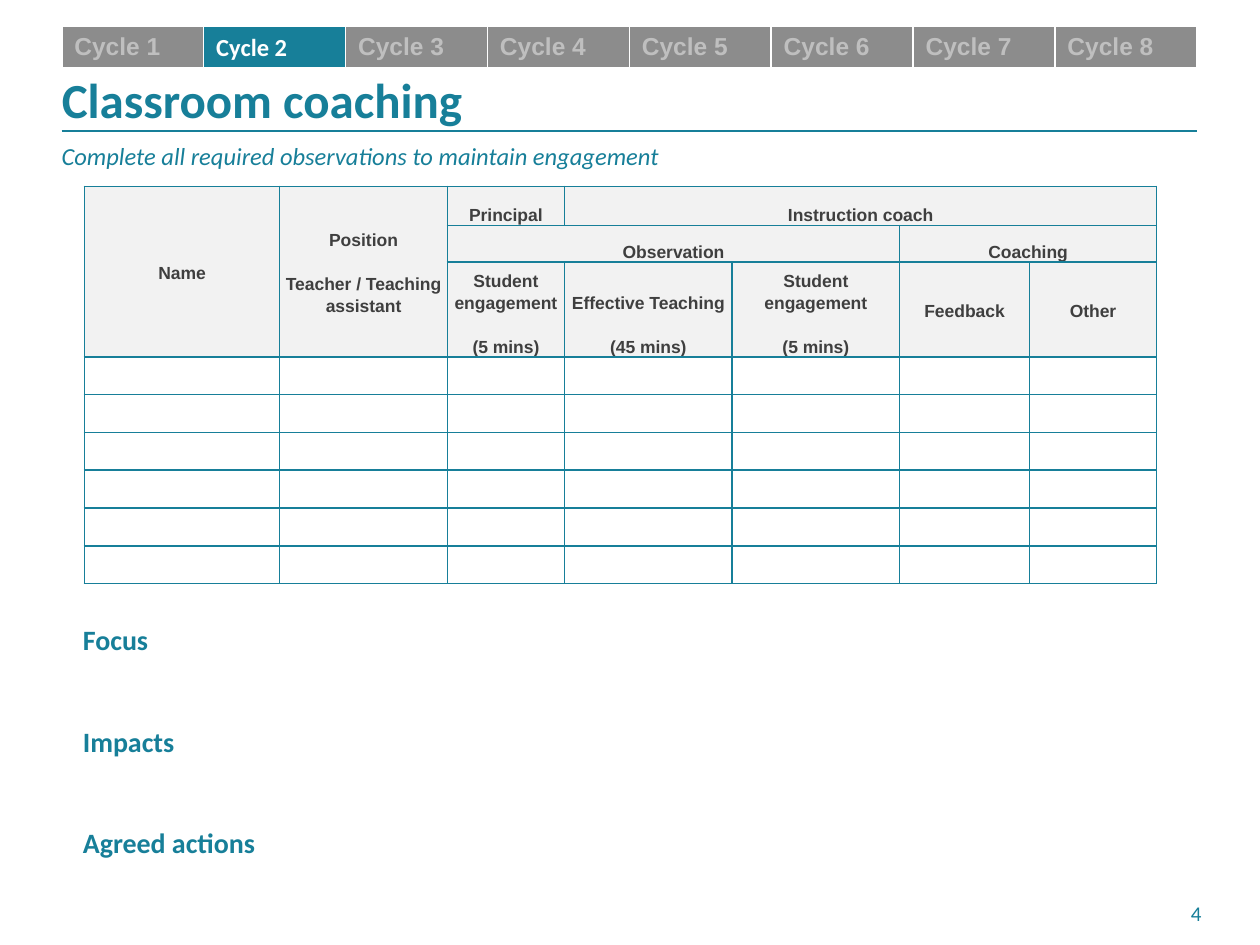
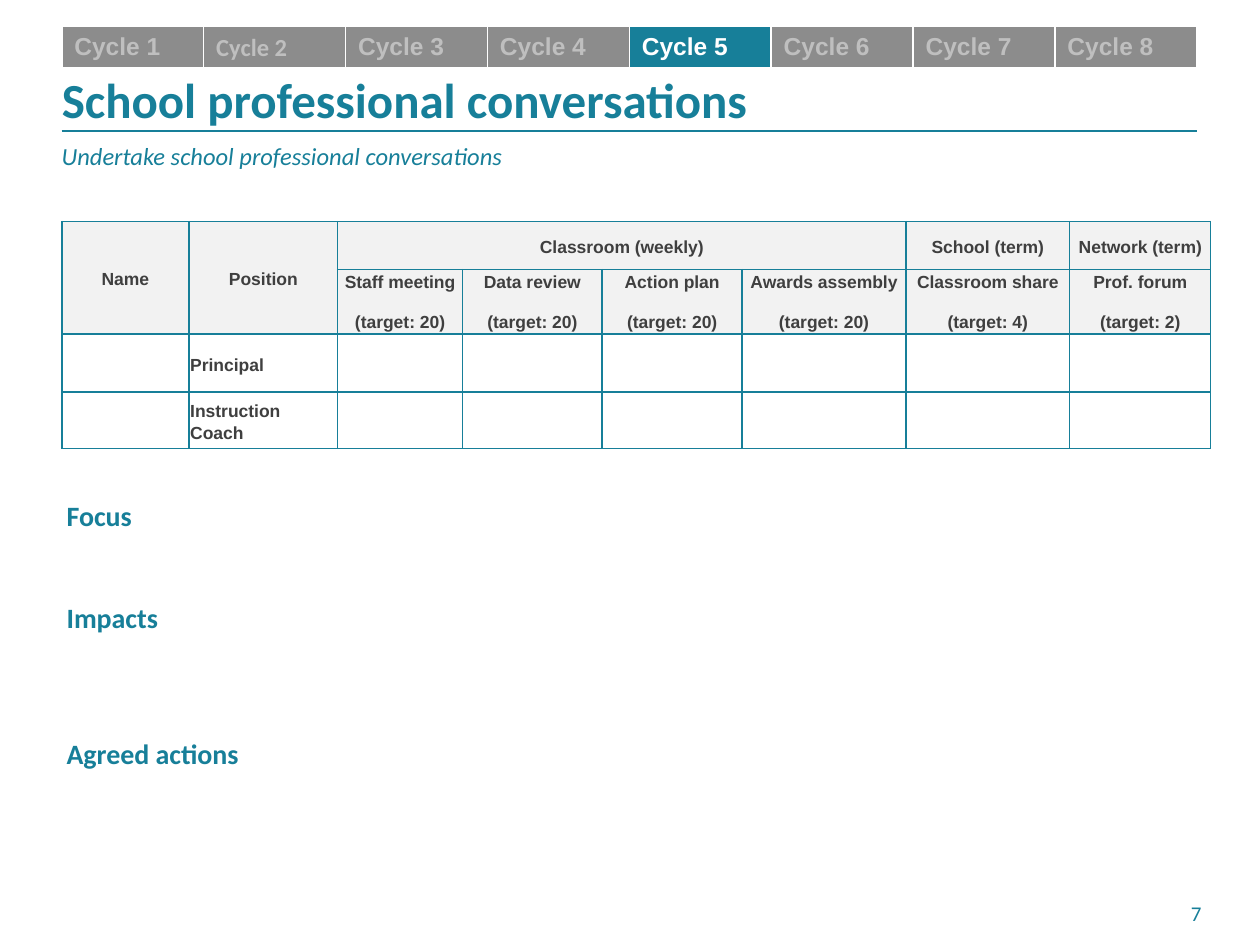
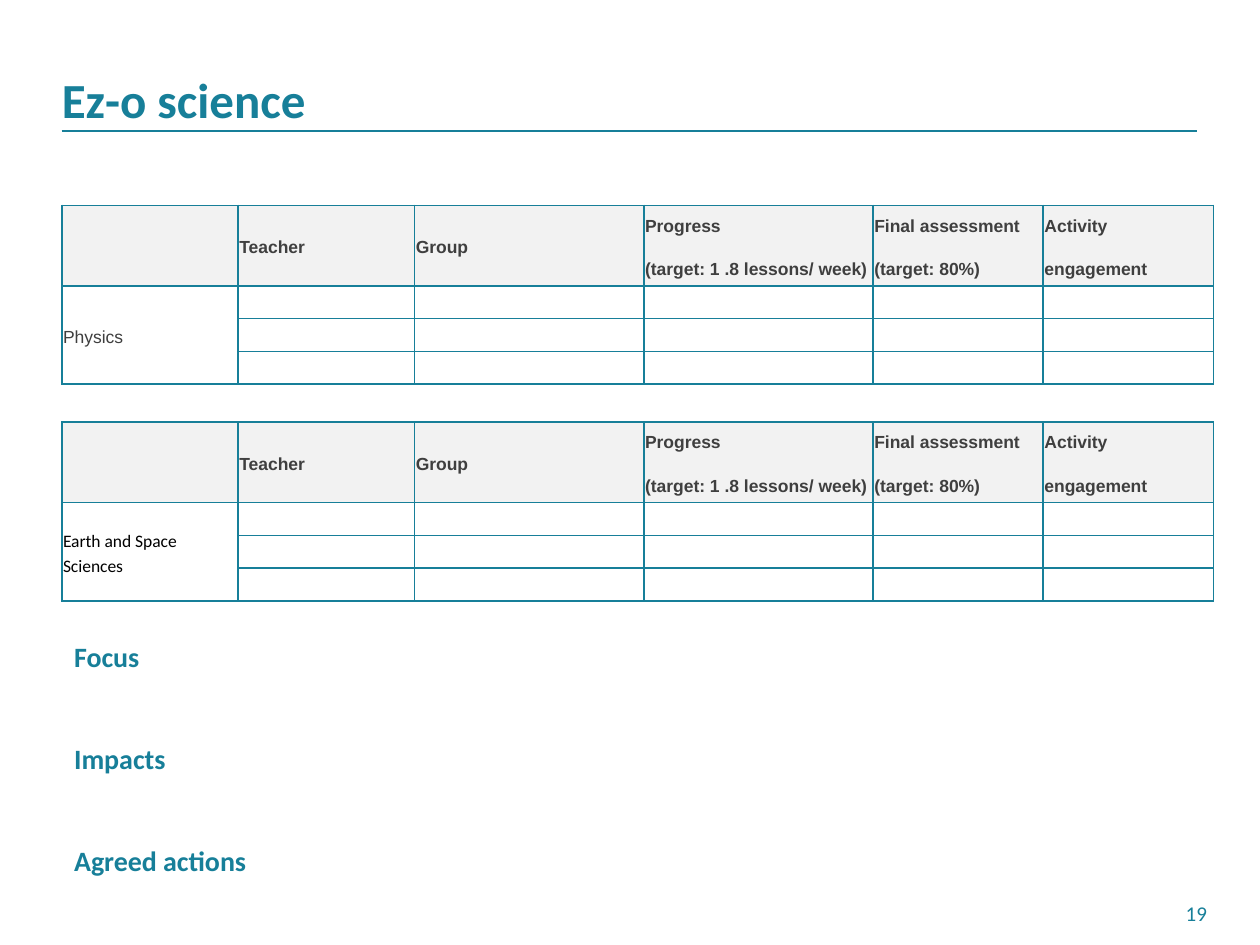
from lxml.etree import SubElement as Sub
from pptx import Presentation
from pptx.dml.color import RGBColor
from pptx.enum.shapes import MSO_CONNECTOR as Conn
from pptx.enum.text import MSO_ANCHOR as Anchor, MSO_AUTO_SIZE as Fit, PP_ALIGN as Align
from pptx.oxml.ns import qn
from pptx.util import Inches, Pt

TEAL, WHITE, BLACK = "177F99", "FFFFFF", "000000"
BAND, DIM, HEAD, INK = "8C8C8C", "BFBFBF", "F2F2F2", "3F3F3F"
LEFT, WIDE = 0.49, 9.01
MID, JUST = Align.CENTER, Align.JUSTIFY


def tint(code):
    return RGBColor.from_string(code)


def put(par, text, size, color, font="Calibri", bold=False, italic=False):
    run = par.add_run()
    run.text = text
    face = run.font
    face.name, face.size = font, Pt(size)
    face.bold, face.italic = bold, italic
    face.color.rgb = tint(color)


def clear(frame):
    """Remove the insets of a text frame."""
    frame.margin_left = frame.margin_right = 0
    frame.margin_top = frame.margin_bottom = 0


def box(slide, left, top, width, height):
    frame = slide.shapes.add_textbox(
        Inches(left), Inches(top), Inches(width), Inches(height)).text_frame
    frame.word_wrap = True
    return frame


# Parts that every slide shares
def start(deck, title, page, note=None):
    slide = deck.slides.add_slide(deck.slide_layouts[5])
    rule = slide.shapes.add_connector(
        Conn.STRAIGHT, Inches(LEFT), Inches(1.04), Inches(LEFT + WIDE), Inches(1.04))
    rule.line.color.rgb = tint(TEAL)
    rule.line.width = Pt(1)
    Sub(rule._element.spPr, qn("a:effectLst"))

    head = slide.shapes.title
    head.left, head.top = Inches(LEFT), Inches(0.55)
    head.width, head.height = Inches(WIDE), Inches(0.47)
    frame = head.text_frame
    clear(frame)
    frame.auto_size = Fit.NONE
    frame.vertical_anchor = Anchor.TOP
    frame.paragraphs[0].alignment = Align.LEFT
    put(frame.paragraphs[0], title, 28, TEAL, bold=True)

    foot = box(slide, 9.18, 7.15, 0.63, 0.35)
    clear(foot)
    foot.paragraphs[0].alignment = MID
    put(foot.paragraphs[0], page, 12, TEAL)
    if note:
        put(box(slide, 0.39, 1.07, 9.22, 0.34).paragraphs[0], note, 14, TEAL, italic=True)
    return slide


def edge(cell, color, base=1):
    """Draw the four borders of a cell; base is the width of the bottom one."""
    props = cell._tc.get_or_add_tcPr()
    for side, width in (("L", 1), ("R", 1), ("T", 1), ("B", base)):
        line = Sub(props, qn("a:ln" + side), w=str(Pt(width)))
        Sub(Sub(line, qn("a:solidFill")), qn("a:srgbClr"), val=color)


def paint(cell, color):
    cell.fill.solid()
    cell.fill.fore_color.rgb = tint(color)


def grid(slide, left, top, cols, rows):
    shape = slide.shapes.add_table(len(rows), len(cols), Inches(left), Inches(top),
                                   Inches(sum(cols)), Inches(sum(rows)))
    table = shape.table
    table.first_row = table.horz_banding = False
    for col, width in zip(table.columns, cols):
        col.width = Inches(width)
    for row, height in zip(table.rows, rows):
        row.height = Inches(height)
    return table


# Cycle tabs
def tabs(slide, now):
    table = grid(slide, LEFT, 0.21, [WIDE / 8] * 8, [0.34])
    for num, cell in enumerate(table.iter_cells(), 1):
        live = num == now
        edge(cell, WHITE, 3)
        paint(cell, TEAL if live else BAND)
        put(cell.text_frame.paragraphs[0], f"Cycle {num}", 14, WHITE if live else DIM,
            "Calibri" if num == 2 else "Arial", bold=True)


# Form tables
def form(slide, left, top, cols, rows, heads):
    """Blank bordered table whose first rows are shaded."""
    table = grid(slide, left, top, cols, rows)
    for place, cell in enumerate(table.iter_cells()):
        edge(cell, TEAL)
        paint(cell, HEAD if place < heads * len(cols) else WHITE)
        cell.margin_left = cell.margin_right = cell.margin_top = Inches(0.01)
        cell.margin_bottom = 0
        cell.vertical_anchor = Anchor.MIDDLE
        Sub(cell.text_frame.paragraphs[0]._p, qn("a:endParaRPr"), sz="1000")
    return table


def fill(table, row, col, text, down=1, over=1, align=MID, lead=1.15,
         low=False, font="Arial", color=INK, bold=True):
    cell = table.cell(row, col)
    if down > 1 or over > 1:
        cell.merge(table.cell(row + down - 1, col + over - 1))
    if low:
        cell.vertical_anchor = Anchor.BOTTOM
    frame = cell.text_frame
    for num, line in enumerate(text.split("\n")):
        par = frame.add_paragraph() if num else frame.paragraphs[0]
        par.alignment, par.line_spacing = align, lead
        par.space_before = par.space_after = Pt(6)
        put(par, line, 10, color, font, bold)


# Headings for written notes, with room left between them
def notes(slide, left, top, width, height, gaps=(39, 39)):
    frame = box(slide, left, top, width, height)
    for num, word in enumerate(("Focus", "Impacts", "Agreed actions")):
        par = frame.add_paragraph() if num else frame.paragraphs[0]
        if num:
            par.space_before = Pt(gaps[num - 1])
        put(par, word, 16, TEAL, bold=True)


def coach(deck):
    slide = start(deck, "Classroom coaching", "4",
                  "Complete all required observations to maintain engagement")
    tabs(slide, 2)
    table = form(slide, 0.67, 1.48, [1.55, 1.33, 0.93, 1.33, 1.33, 1.03, 1.01],
                 [0.31, 0.29, 0.71] + [0.3] * 6, 3)
    fill(table, 0, 0, "Name", down=3)
    fill(table, 0, 1, "Position\nTeacher / Teaching assistant", down=3)
    fill(table, 0, 2, "Principal", low=True)
    fill(table, 0, 3, "Instruction coach", over=4, low=True)
    fill(table, 1, 2, "Observation", over=3, low=True)
    fill(table, 1, 5, "Coaching", over=2, low=True)
    watch = ("Student engagement\n(5 mins)", "Effective Teaching\n(45 mins)",
             "Student engagement\n(5 mins)")
    for col, text in enumerate(watch, 2):
        fill(table, 2, col, text, low=True)
    fill(table, 2, 5, "Feedback")
    fill(table, 2, 6, "Other")
    notes(slide, 0.56, 4.89, 8.94, 2.26)


def talks(deck):
    slide = start(deck, "School professional conversations", "7",
                  "Undertake school professional conversations")
    tabs(slide, 5)
    table = form(slide, LEFT, 1.76, [1.01, 1.18, 0.99, 1.11, 1.11, 1.3, 1.3, 1.12],
                 [0.38, 0.5, 0.46, 0.45], 2)
    fill(table, 0, 0, "Name", down=2)
    fill(table, 0, 1, "Position", down=2)
    fill(table, 0, 2, "Classroom (weekly)", over=4)
    fill(table, 0, 6, "School (term)")
    fill(table, 0, 7, "Network (term)")
    goals = (("Staff meeting", 20), ("Data review", 20), ("Action plan", 20),
             ("Awards assembly", 20), ("Classroom share", 4), ("Prof. forum", 2))
    for col, (name, goal) in enumerate(goals, 2):
        fill(table, 1, col, f"{name}\n(target: {goal})", lead=1.0)
    for row, role in enumerate(("Principal", "Instruction Coach"), 2):
        fill(table, row, 1, role, align=JUST)
    notes(slide, 0.43, 3.91, 9.11, 2.26, (39, 58.5))


def course(slide, top, topic, **look):
    table = form(slide, LEFT, top, [1.4, 1.4, 1.82, 1.82, 1.35, 1.35],
                 [0.64] + [0.26] * 3, 1)
    heads = ("Teacher", "Group", "Progress\n(target: 1 .8 lessons/ week)",
             "Final assessment\n(target: 80%)", "Activity\nengagement")
    for col, text in enumerate(heads, 1):
        fill(table, 0, col, text, align=JUST)
    fill(table, 1, 0, topic, down=3, bold=False, **look)


def science(deck):
    slide = start(deck, "Ez-o science", "19")
    course(slide, 1.63, "Physics", align=JUST)
    course(slide, 3.35, "Earth and Space Sciences", align=Align.LEFT,
           font="Calibri", color=BLACK)
    notes(slide, LEFT, 5.03, 9.17, 1.99)


def main():
    deck = Presentation()
    deck.slide_width, deck.slide_height = Inches(10), Inches(7.5)
    coach(deck)
    talks(deck)
    science(deck)
    deck.save("out.pptx")


if __name__ == "__main__":
    main()
